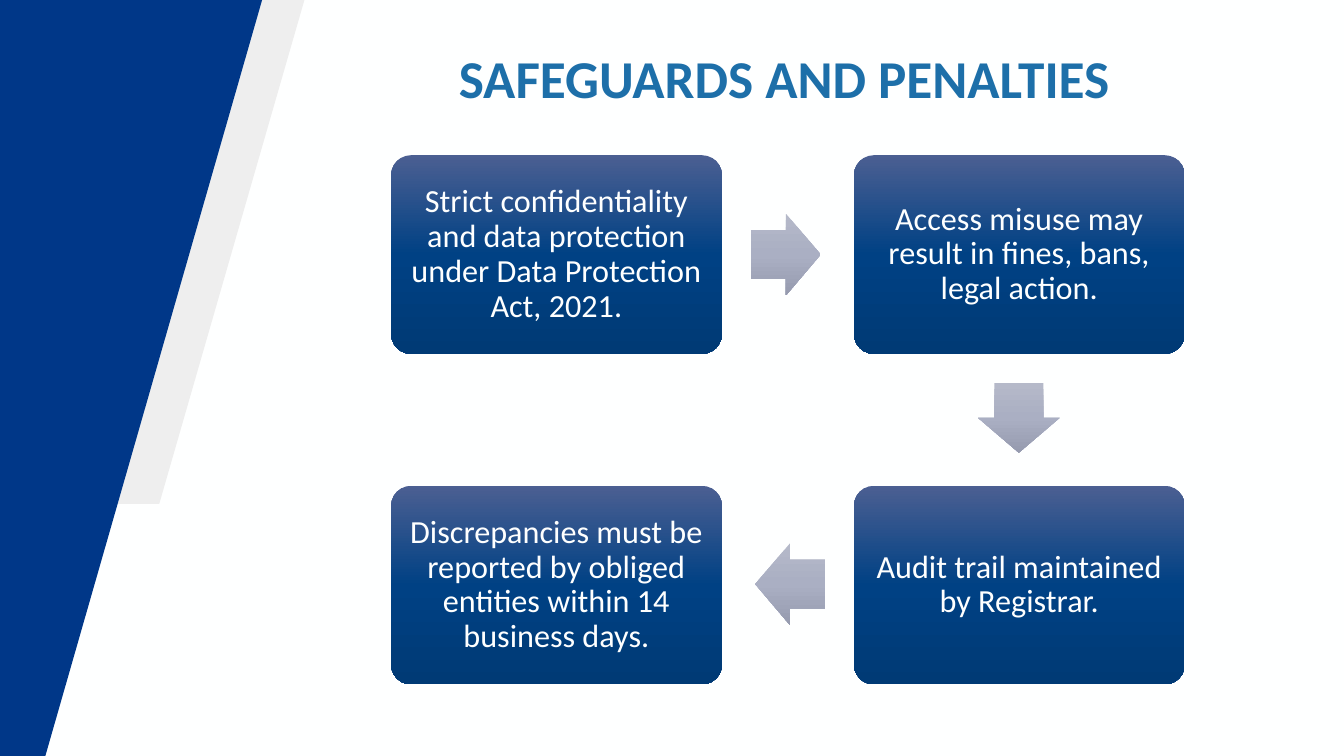
from copy import deepcopy

from pptx import Presentation
from pptx.dml.color import RGBColor
from pptx.enum.shapes import MSO_SHAPE
from pptx.enum.text import MSO_ANCHOR, PP_ALIGN
from pptx.oxml.ns import qn
from pptx.util import Inches, Pt

COLORS = {
    "background": "FEFFFF",
    "text": "FEFFFF",
    "title": "1D6FA9",
    "band": "003788",
    "band_shade": "EEEEEE",
}
GRADIENTS = {
    "box": ["4B5F92", "004184", "003A75"],
    "arrow": ["B5B9C9", "AAAFC3", "969BAF"],
}
FONT = "Calibri"
BOX_WIDTH, BOX_HEIGHT = 3.28, 1.97
COLUMNS = [3.88, 8.47]
ROWS = [1.54, 4.82]

# Column, row and wording of each step, in reading order of the flow
STEPS = [
    (0, 0, "Strict confidentiality and data protection under Data Protection Act, 2021."),
    (1, 0, "Access misuse may result in fines, bans, legal action."),
    (1, 1, "Audit trail maintained by Registrar."),
    (0, 1, "Discrepancies must be reported by obliged entities within 14 business days."),
]
ARROWS = [
    (MSO_SHAPE.RIGHT_ARROW, 7.45, 2.12, 0.69, 0.81),
    (MSO_SHAPE.DOWN_ARROW, 9.7, 3.8, 0.81, 0.69),
    (MSO_SHAPE.LEFT_ARROW, 7.49, 5.39, 0.69, 0.81),
]


def color(name):
    return RGBColor.from_string(COLORS[name])


def fill_gradient(shape, name):
    """Fill a shape from top to bottom with three evenly spaced colours."""
    shape.fill.gradient()
    shape.fill.gradient_angle = 270
    stop_list = shape._element.spPr.find(qn("a:gradFill")).find(qn("a:gsLst"))
    stop_list.append(deepcopy(stop_list[-1]))
    for index, (stop, value) in enumerate(zip(shape.fill.gradient_stops, GRADIENTS[name])):
        stop.position = index / 2
        stop.color.rgb = RGBColor.from_string(value)


def add_polygon(slide, points, color_name):
    corners = [(Inches(x), Inches(y)) for x, y in points]
    builder = slide.shapes.build_freeform(*corners[0])
    builder.add_line_segments(corners[1:], close=True)
    shape = builder.convert_to_shape()
    shape.shadow.inherit = False
    shape.fill.solid()
    shape.fill.fore_color.rgb = color(color_name)
    shape.line.fill.background()


def add_gradient_shape(slide, preset, left, top, width, height, adjustments, gradient):
    shape = slide.shapes.add_shape(
        preset, Inches(left), Inches(top), Inches(width), Inches(height))
    for index, value in enumerate(adjustments):
        shape.adjustments[index] = value
    shape.shadow.inherit = False
    shape.line.fill.background()
    fill_gradient(shape, gradient)
    return shape


def format_paragraph(paragraph, size, color_name, bold=False):
    paragraph.alignment = PP_ALIGN.CENTER
    paragraph.line_spacing = 0.9
    paragraph.font.name = FONT
    paragraph.font.size = Pt(size)
    paragraph.font.bold = bold
    paragraph.font.color.rgb = color(color_name)


def add_step(slide, column, row, text):
    box = add_gradient_shape(slide, MSO_SHAPE.ROUNDED_RECTANGLE, COLUMNS[column], ROWS[row],
                             BOX_WIDTH, BOX_HEIGHT, [0.1], "box")
    frame = box.text_frame
    frame.word_wrap = True
    frame.vertical_anchor = MSO_ANCHOR.MIDDLE
    frame.margin_left = frame.margin_right = Inches(0.1)
    frame.margin_top = frame.margin_bottom = Inches(0.1)
    frame.text = text
    format_paragraph(frame.paragraphs[0], 23, "text")


def set_title(slide, text):
    title = slide.shapes.title
    title.left, title.top = Inches(3.19), Inches(0.47)
    title.width, title.height = Inches(9.18), Inches(0.9)
    title.text_frame.text = text
    title.text_frame.vertical_anchor = MSO_ANCHOR.TOP
    format_paragraph(title.text_frame.paragraphs[0], 38, "title", bold=True)


def main():
    presentation = Presentation()
    presentation.slide_width = Inches(13.33)
    presentation.slide_height = Inches(7.5)
    slide = presentation.slides.add_slide(presentation.slide_layouts[5])
    slide.background.fill.solid()
    slide.background.fill.fore_color.rgb = color("background")

    add_polygon(slide, [(2.6, 0), (3.02, 0), (1.58, 5), (1.16, 5)], "band_shade")
    add_polygon(slide, [(0, 0), (2.6, 0), (0.45, 7.5), (0, 7.5)], "band")
    set_title(slide, "SAFEGUARDS AND PENALTIES")
    for column, row, text in STEPS:
        add_step(slide, column, row, text)
    for preset, left, top, width, height in ARROWS:
        add_gradient_shape(slide, preset, left, top, width, height, [0.6, 0.5], "arrow")

    presentation.save("out.pptx")


if __name__ == "__main__":
    main()
